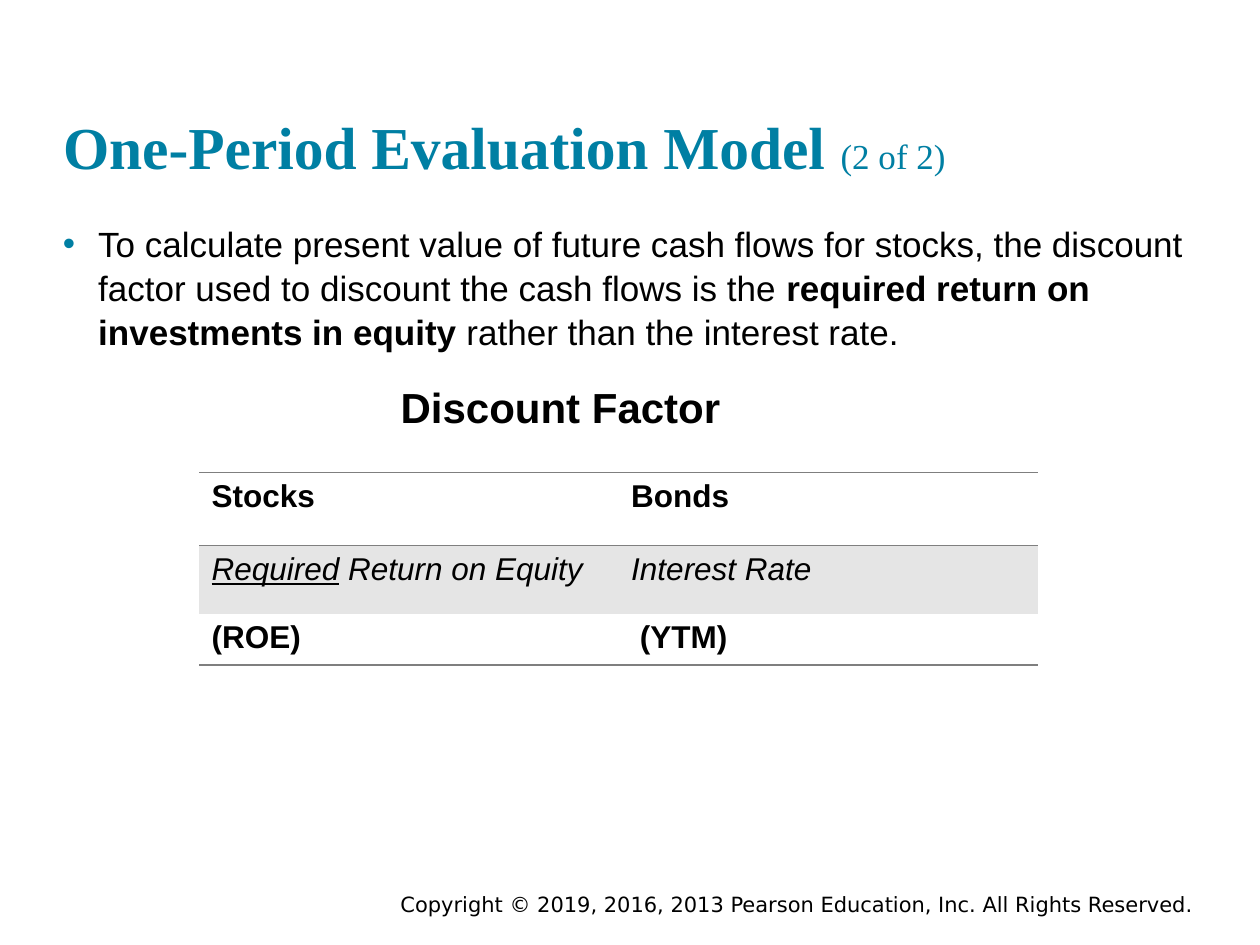
from lxml import etree
from pptx import Presentation
from pptx.dml.color import RGBColor
from pptx.enum import text
from pptx.oxml import ns
from pptx.util import Inches, Pt

TEAL = RGBColor(0x00, 0x7F, 0xA3)
BLACK = RGBColor(0x00, 0x00, 0x00)
RULE_GREY = RGBColor(0x7F, 0x7F, 0x7F)
BAND_GREY = RGBColor(0xE5, 0xE5, 0xE5)


def add_run(paragraph, wording, size, color=BLACK, font="Arial",
            bold=False, italic=False, underline=False):
    run = paragraph.add_run()
    run.text = wording
    run.font.size = Pt(size)
    run.font.name = font
    run.font.color.rgb = color
    run.font.bold = bold
    run.font.italic = italic
    run.font.underline = underline


def add_child(parent, tag, **attributes):
    return etree.SubElement(parent, ns.qn(tag), attributes)


def clear_margins(frame):
    frame.margin_left = frame.margin_right = 0
    frame.margin_top = frame.margin_bottom = 0


def indent(paragraph, left, first=0):
    properties = paragraph._p.get_or_add_pPr()
    properties.set("marL", str(Inches(left)))
    properties.set("indent", str(Inches(first)))
    return properties


def add_bullet(paragraph):
    properties = indent(paragraph, 0.28, -0.28)
    bullet_color = add_child(properties, "a:buClr")
    add_child(bullet_color, "a:srgbClr", val=str(TEAL))
    add_child(properties, "a:buFont", typeface="Arial")
    add_child(properties, "a:buChar", char="•")


def add_text_box(slide, left, top, width, height):
    box = slide.shapes.add_textbox(
        Inches(left), Inches(top), Inches(width), Inches(height))
    box.text_frame.word_wrap = True
    return box.text_frame


def fill_title(slide):
    title = slide.shapes.title
    title.left, title.top = Inches(0.5), Inches(0.24)
    title.width, title.height = Inches(9), Inches(1.2)
    frame = title.text_frame
    clear_margins(frame)
    frame.auto_size = text.MSO_AUTO_SIZE.NONE
    frame.vertical_anchor = text.MSO_ANCHOR.BOTTOM
    heading = frame.paragraphs[0]
    heading.alignment = text.PP_ALIGN.LEFT
    add_run(heading, "One-Period Evaluation Model ", 34, TEAL,
            "Times New Roman", bold=True)
    add_run(heading, "(2 of 2)", 20, TEAL, "Times New Roman")


def add_body(slide):
    frame = add_text_box(slide, 0.5, 1.75, 9, 4.95)
    clear_margins(frame)
    explanation = frame.paragraphs[0]
    add_bullet(explanation)
    explanation.line_spacing = 1.05
    add_run(explanation, "To calculate present value of future cash flows for "
            "stocks, the discount factor used to discount the cash flows is the ", 20)
    add_run(explanation, "required return on investments in equity", 20, bold=True)
    add_run(explanation, " rather than the interest rate.", 20)
    table_heading = frame.add_paragraph()
    indent(table_heading, 2.68)
    table_heading.space_before = Pt(15)
    table_heading.line_spacing = 1.05
    add_run(table_heading, "Discount Factor", 24, bold=True)


def set_borders(cell, ruled_sides):
    properties = cell._tc.get_or_add_tcPr()
    for side in "LRTB":
        border = add_child(properties, f"a:ln{side}", w=str(Pt(1)))
        if side in ruled_sides:
            paint = add_child(border, "a:solidFill")
            add_child(paint, "a:srgbClr", val=str(RULE_GREY))
        else:
            add_child(border, "a:noFill")


def add_factor_table(slide):
    bold, italic = {"bold": True}, {"italic": True}
    underlined = {"italic": True, "underline": True}
    rows = [
        (0.58, "TB", None, [[("Stocks", bold)], [("Bonds", bold)]]),
        (0.54, "T", BAND_GREY, [
            [("Required", underlined), (" Return on Equity", italic)],
            [("Interest Rate", italic)]]),
        (0.41, "B", None, [[("(ROE)", bold)], [(" (YTM)", bold)]]),
    ]
    table = slide.shapes.add_table(
        len(rows), 2, Inches(1.58), Inches(3.75), Inches(6.66), Inches(1.53)).table
    table.first_row = table.horz_banding = False
    for column in table.columns:
        column.width = Inches(3.33)
    for row_index, (height, ruled_sides, band, cells) in enumerate(rows):
        table.rows[row_index].height = Inches(height)
        for column_index, pieces in enumerate(cells):
            cell = table.cell(row_index, column_index)
            set_borders(cell, ruled_sides)
            if band is None:
                cell.fill.background()
            else:
                cell.fill.solid()
                cell.fill.fore_color.rgb = band
            for wording, style in pieces:
                add_run(cell.text_frame.paragraphs[0], wording, 18, **style)


def add_copyright(slide):
    frame = add_text_box(slide, 2.95, 7.03, 6.75, 0.3)
    frame.auto_size = text.MSO_AUTO_SIZE.SHAPE_TO_FIT_TEXT
    notice = frame.paragraphs[0]
    notice.alignment = text.PP_ALIGN.CENTER
    add_run(notice, "Copyright © 2019, 2016, 2013 Pearson Education, Inc. "
            "All Rights Reserved.", 12, font="DejaVu Sans")


def main():
    presentation = Presentation()
    presentation.slide_width = Inches(10)
    presentation.slide_height = Inches(7.5)
    slide = presentation.slides.add_slide(presentation.slide_layouts[5])
    add_copyright(slide)
    fill_title(slide)
    add_body(slide)
    add_factor_table(slide)
    presentation.save("out.pptx")


if __name__ == "__main__":
    main()
